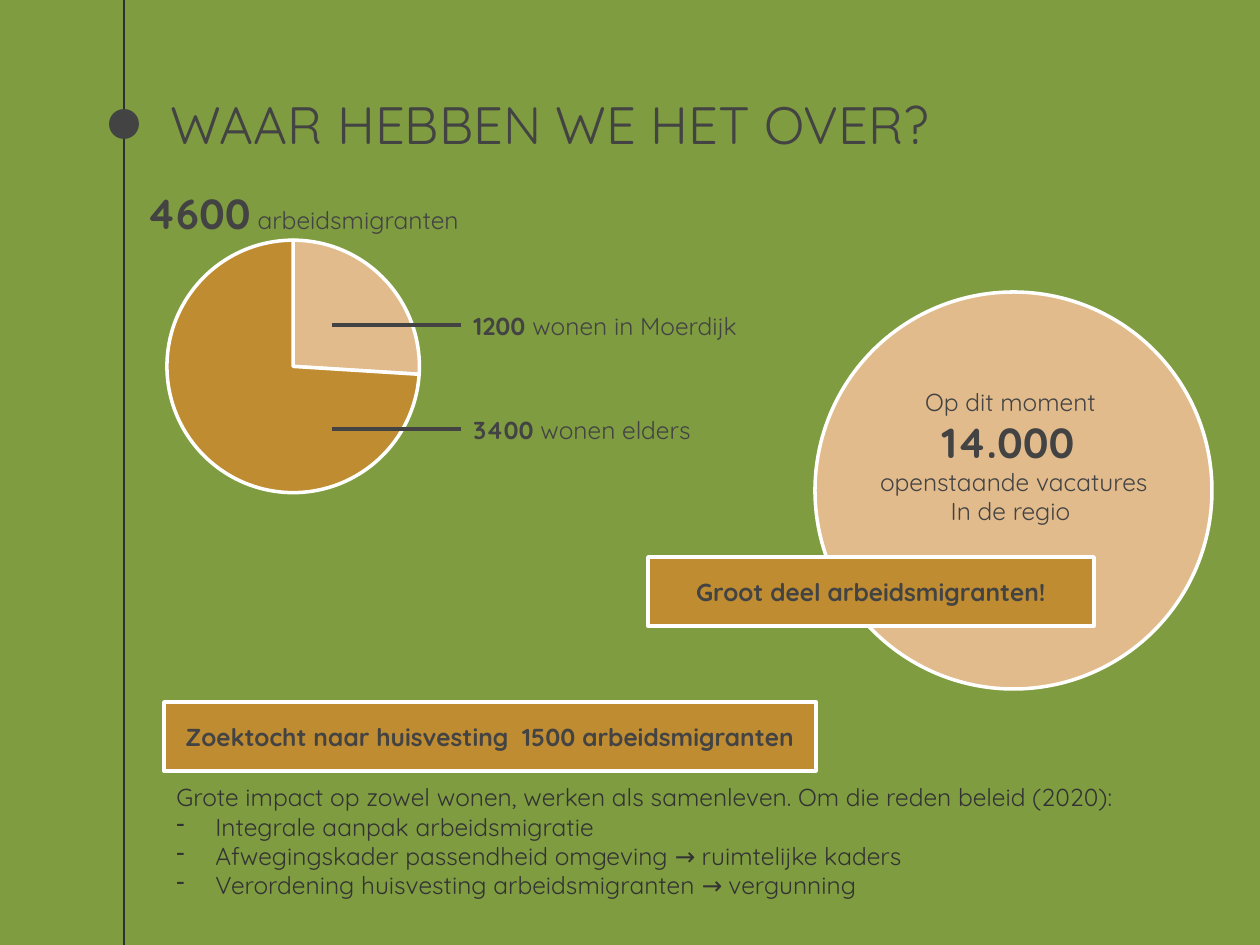
"""Build the slide on labour migrants, vacancies and housing."""
from lxml import etree
from pptx import Presentation
from pptx.chart.data import CategoryChartData
from pptx.dml.color import RGBColor
from pptx.enum.chart import XL_CHART_TYPE
from pptx.enum.shapes import MSO_CONNECTOR, MSO_SHAPE
from pptx.enum.text import MSO_ANCHOR, PP_ALIGN
from pptx.oxml import parse_xml
from pptx.oxml.ns import nsdecls, qn
from pptx.util import Pt

PIE, STRAIGHT = XL_CHART_TYPE.PIE, MSO_CONNECTOR.STRAIGHT
OVAL, RECT = MSO_SHAPE.OVAL, MSO_SHAPE.RECTANGLE
LEFT, CENTER, MIDDLE = PP_ALIGN.LEFT, PP_ALIGN.CENTER, MSO_ANCHOR.MIDDLE
PX = 914400 / 126
THEME = {
    "font": "Quicksand", "title": 30, "big": 24, "body": 14, "chart": 10,
    "green": RGBColor.from_string("7F9C41"),
    "dark": RGBColor.from_string("434343"),
    "body_ink": RGBColor.from_string("333333"),
    "axis": RGBColor.from_string("2E3037"),
    "sand": RGBColor.from_string("E2BB8C"),
    "ochre": RGBColor.from_string("BF8C31"),
    "white": RGBColor.from_string("FFFFFF"),
}

prs = Presentation()
prs.slide_width, prs.slide_height = int(1260 * PX), int(945 * PX)
slide = prs.slides.add_slide(prs.slide_layouts[6])
shapes = slide.shapes
slide.background.fill.solid()
slide.background.fill.fore_color.rgb = THEME["green"]


def add_text(box, paragraphs, align=LEFT, ink="dark"):
    """Add a text box; each paragraph lists (text, size, bold) runs."""
    frame = shapes.add_textbox(*(int(v * PX) for v in box)).text_frame
    frame.word_wrap = True
    for index, runs in enumerate(paragraphs):
        paragraph = frame.paragraphs[0] if index == 0 else frame.add_paragraph()
        paragraph.alignment = align
        for text, size, bold in runs:
            run = paragraph.add_run()
            run.text = text
            run.font.name = THEME["font"]
            run.font.size = Pt(THEME[size])
            run.font.bold = bold
            run.font.color.rgb = THEME[ink]
    return frame


def add_figure(kind, box, fill, outline, width):
    """Add a filled and outlined shape without shadow."""
    figure = shapes.add_shape(kind, *(int(v * PX) for v in box))
    figure.shadow.inherit = False
    figure.fill.solid()
    figure.fill.fore_color.rgb = THEME[fill]
    figure.line.color.rgb = THEME[outline]
    figure.line.width = Pt(width)


migrants = CategoryChartData()
migrants.categories = ["1", "2"]
migrants.add_series("Series 1", (26, 74))
pie_box = (68, 223, 446, 287)
pie = shapes.add_chart(PIE, *(int(v * PX) for v in pie_box), migrants).chart
pie.has_legend = False
pie.has_title = False
pie.font.name = "Arial"
pie.font.size = Pt(THEME["chart"])
pie.plots[0].vary_by_categories = False
for index, colour in enumerate(("sand", "ochre")):
    slice_format = pie.plots[0].series[0].points[index].format
    slice_format.fill.solid()
    slice_format.fill.fore_color.rgb = THEME[colour]
    slice_format.line.color.rgb = THEME["white"]
    slice_format.line.width = Pt(2)

plot_area = pie.plots[0]._element.getparent()
for old_layout in plot_area.findall(qn("c:layout")):
    plot_area.remove(old_layout)
plot_area.insert(0, parse_xml(
    f'<c:layout {nsdecls("c")}><c:manualLayout><c:layoutTarget val="inner"/>'
    '<c:xMode val="edge"/><c:yMode val="edge"/><c:x val="0.22"/><c:y val="0.06"/>'
    '<c:w val="0.57"/><c:h val="0.88"/></c:manualLayout></c:layout>'))

for x1, y1, x2, y2, colour, width in (
    (124, 0, 124, 945, "axis", 0.75),
    (332, 325, 461, 325, "dark", 2),
    (332, 429, 461, 429, "dark", 2),
):
    line = shapes.add_connector(STRAIGHT, *(int(v * PX) for v in (x1, y1, x2, y2)))
    line.line.color.rgb = THEME[colour]
    line.line.width = Pt(width)
    etree.SubElement(line._element.spPr, qn("a:effectLst"))

add_figure(OVAL, (111, 111, 26, 26), "dark", "dark", 2.25)
title = add_text((158, 92, 1065, 63), [[("WAAR HEBBEN WE HET OVER?", "title", False)]])
title.vertical_anchor = MIDDLE

add_text((134, 181, 367, 63), [
    [("4600", "big", True), (" ", "body", True), ("arbeidsmigranten", "body", False)]])
for top, count, place in ((305, "1200", " wonen in Moerdijk"), (409, "3400", " wonen elders")):
    add_text((461, top, 318, 43), [[(count, "body", True), (place, "body", False)]])

add_figure(OVAL, (815, 292, 397, 397), "sand", "white", 2)
add_text((855, 381, 318, 183), [
    [("Op dit moment ", "body", False)],
    [("14.000 ", "big", True)],
    [("openstaande vacatures", "body", False)],
    [("In de regio ", "body", False)],
], CENTER)

for left, top, width, message in (
    (648, 557, 446, "Groot deel arbeidsmigranten!"),
    (164, 702, 652, "Zoektocht naar huisvesting  1500 arbeidsmigranten"),
):
    add_figure(RECT, (left, top, width, 69), "ochre", "white", 2)
    add_text((left, top + 14, width, 43), [[(message, "body", True)]], CENTER)

policy = add_text((164, 776, 1071, 131), [[(text, "body", False)] for text in (
    "Grote impact op zowel wonen, werken als samenleven. Om die reden beleid (2020):",
    "Integrale aanpak arbeidsmigratie",
    "Afwegingskader passendheid omgeving → ruimtelijke kaders",
    "Verordening huisvesting arbeidsmigranten → vergunning",
)], ink="body_ink")
for measure in policy.paragraphs[1:]:
    properties = measure._p.get_or_add_pPr()
    properties.set("marL", str(int(39 * PX)))
    properties.set("indent", str(int(-39 * PX)))
    etree.SubElement(properties, qn("a:buChar")).set("char", "-")

prs.save("out.pptx")
